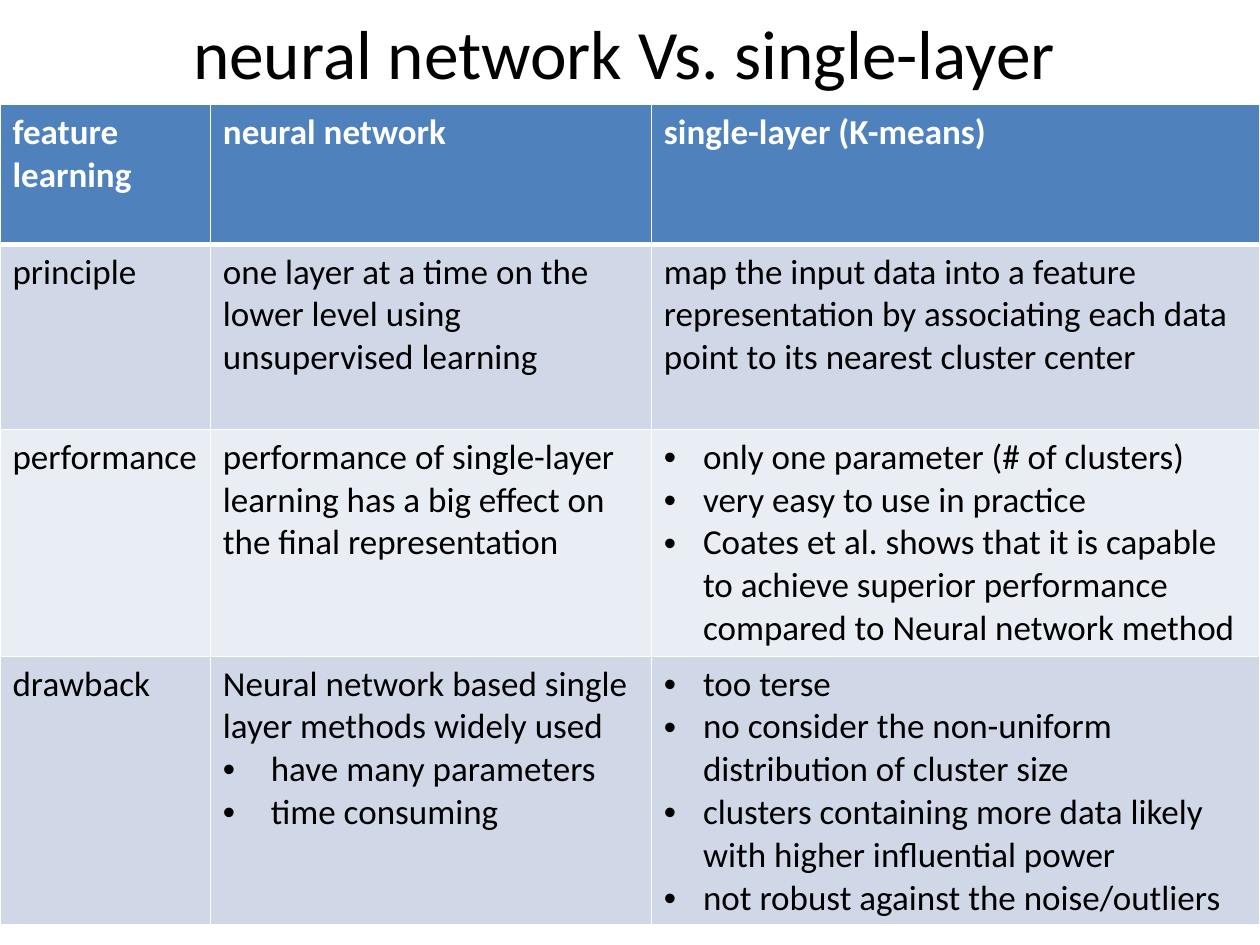
import pptx
import pptx.dml.color
import pptx.enum.text
import pptx.oxml
import pptx.oxml.ns
import pptx.util
from pptx.util import Inches

HEADS = ["feature learning", "neural network", "single-layer (K-means)"]
# A cell is a list of paragraphs; a leading "•" marks a bullet.
ROWS = [
    [["principle"],
     ["one layer at a time on the lower level using unsupervised learning"],
     ["map the input data into a feature representation by associating "
      "each data point to its nearest cluster center"]],
    [["performance"],
     ["performance of single-layer learning has a big effect on the final "
      "representation"],
     ["•only one parameter (# of clusters)",
      "•very easy to use in practice",
      "•Coates et al. shows that it is capable to achieve superior "
      "performance compared to Neural network method"]],
    [["drawback"],
     ["Neural network based single layer methods widely used",
      "•have many parameters",
      "•time consuming"],
     ["•too terse",
      "•no consider the non-uniform distribution of cluster size",
      "•clusters containing more data likely with higher influential power",
      "•not robust against the noise/outliers"]],
]
WIDTHS = [1.67, 3.5, 4.83]
HEIGHTS = [1.11, 1.47, 1.8, 2.13]
INDENTS = [0, 0.38, 0.31]


def color(code):
    return pptx.dml.color.RGBColor.from_string(code)


class Deck:
    face = "Calibri"
    ink, white = "000000", "FFFFFF"
    head, bands = "4F81BD", ["D0D8E8", "E9EDF4"]

    def __init__(self):
        self.show = pptx.Presentation()
        self.show.slide_width = Inches(10)
        self.show.slide_height = Inches(7.5)
        self.slide = self.show.slides.add_slide(self.show.slide_layouts[6])

    def style(self, para, size, code, bold=False):
        font = para.font
        font.name, font.size, font.bold = self.face, pptx.util.Pt(size), bold
        font.color.rgb = color(code)

    def title(self, text, left, top, width, height):
        box = self.slide.shapes.add_textbox(
            Inches(left), Inches(top), Inches(width), Inches(height))
        frame = box.text_frame
        frame.word_wrap = True
        frame.vertical_anchor = pptx.enum.text.MSO_ANCHOR.MIDDLE
        para = frame.paragraphs[0]
        para.text = text
        para.alignment = pptx.enum.text.PP_ALIGN.CENTER
        self.style(para, 39.6, self.ink)

    def bullet(self, para, indent):
        props = para._p.get_or_add_pPr()
        props.set("marL", str(Inches(indent)))
        props.set("indent", str(-Inches(indent)))
        space = pptx.oxml.ns.nsdecls("a")
        for tag in ('buFont typeface="Arial"', 'buChar char="•"'):
            props.append(pptx.oxml.parse_xml(f"<a:{tag} {space}/>"))

    def border(self, cell, top, bottom):
        """Draw white cell edges, 1 pt at the sides; call before the fill."""
        space = pptx.oxml.ns.nsdecls("a")
        props = cell._tc.get_or_add_tcPr()
        for side, width in zip("LRTB", (1, 1, top, bottom)):
            props.append(pptx.oxml.parse_xml(
                f'<a:ln{side} {space} w="{pptx.util.Pt(width)}"><a:solidFill>'
                f'<a:srgbClr val="{self.white}"/></a:solidFill></a:ln{side}>'))

    def cell(self, cell, lines, row, indent):
        self.border(cell, 3 if row == 1 else 1, 3 if row == 0 else 1)
        cell.fill.solid()
        fill = self.bands[(row - 1) % 2] if row else self.head
        cell.fill.fore_color.rgb = color(fill)
        frame = cell.text_frame
        for i, line in enumerate(lines):
            para = frame.add_paragraph() if i else frame.paragraphs[0]
            para.text = line.lstrip("•")
            self.style(para, 20, self.ink if row else self.white, row == 0)
            if line.startswith("•"):
                self.bullet(para, indent)

    def table(self, rows, left, top):
        grid = self.slide.shapes.add_table(
            len(rows), len(WIDTHS), Inches(left), Inches(top),
            Inches(sum(WIDTHS)), Inches(sum(HEIGHTS))).table
        for col, width in zip(grid.columns, WIDTHS):
            col.width = Inches(width)
        for r, (height, cells) in enumerate(zip(HEIGHTS, rows)):
            grid.rows[r].height = Inches(height)
            for c, lines in enumerate(cells):
                self.cell(grid.cell(r, c), lines, r, INDENTS[c])


def main():
    deck = Deck()
    deck.title("neural network Vs. single-layer", 0.08, 0.08, 9.75, 0.67)
    deck.table([[[head] for head in HEADS]] + ROWS, 0, 0.83)
    deck.show.save("out.pptx")


if __name__ == "__main__":
    main()
